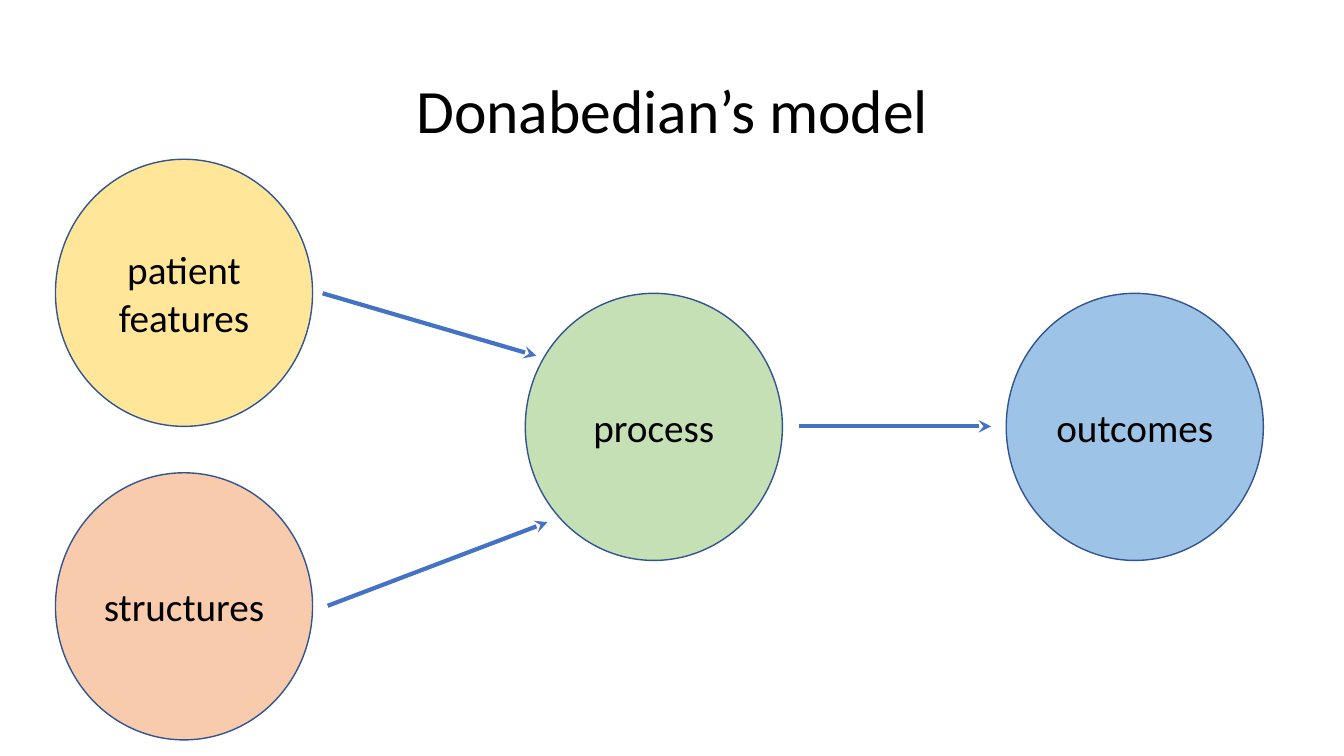
import pptx
import pptx.dml.color
import pptx.enum.shapes
import pptx.enum.text
import pptx.oxml.ns
import pptx.util
from lxml import etree

Inches = pptx.util.Inches
Pt = pptx.util.Pt

FONT = "Calibri"
COLORS = {
    "text": "000000",
    "outline": "325491",
    "arrow": "4472C4",
    "patient": "FFE699",
    "structures": "F8CBAD",
    "process": "C5E0B4",
    "outcomes": "9DC3E6",
}
CIRCLE_W, CIRCLE_H = 2.55, 2.65
# Left, top, fill and text lines, relative to the diagram box
CIRCLES = [
    (0, 0, "patient", ["patient", "features"]),
    (0, 3.11, "structures", ["structures"]),
    (4.66, 1.33, "process", ["process"]),
    (9.43, 1.33, "outcomes", ["outcomes"]),
]
# Start and end points, relative to the diagram box
ARROWS = [
    ((2.65, 1.33), (4.77, 1.95)),
    ((2.7, 4.43), (4.88, 3.6)),
    ((7.37, 2.65), (9.28, 2.65)),
]


def rgb(name):
    return pptx.dml.color.RGBColor.from_string(COLORS[name])


def format_paragraph(p, size):
    p.alignment = pptx.enum.text.PP_ALIGN.CENTER
    p.font.name = FONT
    p.font.size = Pt(size)
    p.font.color.rgb = rgb("text")


def add_title(slide, left, top, width, height, text):
    title = slide.shapes.title
    title.left, title.top = Inches(left), Inches(top)
    title.width, title.height = Inches(width), Inches(height)
    tf = title.text_frame
    tf.text = text
    tf.vertical_anchor = pptx.enum.text.MSO_ANCHOR.MIDDLE
    p = tf.paragraphs[0]
    format_paragraph(p, 44)
    p.line_spacing = 0.9


def add_circle(slide, left, top, color, lines):
    sp = slide.shapes.add_shape(
        pptx.enum.shapes.MSO_SHAPE.OVAL,
        Inches(left), Inches(top), Inches(CIRCLE_W), Inches(CIRCLE_H))
    sp.shadow.inherit = False
    sp.fill.solid()
    sp.fill.fore_color.rgb = rgb(color)
    sp.line.color.rgb = rgb("outline")
    sp.line.width = Pt(1)
    tf = sp.text_frame
    tf.word_wrap = True
    tf.vertical_anchor = pptx.enum.text.MSO_ANCHOR.MIDDLE
    tf.text = "\n".join(lines)
    for p in tf.paragraphs:
        format_paragraph(p, 28)


def add_arrow(slide, x1, y1, x2, y2):
    arrow = slide.shapes.add_connector(
        pptx.enum.shapes.MSO_CONNECTOR.STRAIGHT,
        Inches(x1), Inches(y1), Inches(x2), Inches(y2))
    arrow.line.color.rgb = rgb("arrow")
    arrow.line.width = Pt(3)
    qn = pptx.oxml.ns.qn
    sp_pr = arrow.element.find(qn("p:spPr"))
    etree.SubElement(sp_pr.find(qn("a:ln")), qn("a:tailEnd"), type="stealth")
    etree.SubElement(sp_pr, qn("a:effectLst"))


def add_diagram(slide, left, top):
    for x, y, color, lines in CIRCLES:
        add_circle(slide, left + x, top + y, color, lines)
    for (x1, y1), (x2, y2) in ARROWS:
        add_arrow(slide, left + x1, top + y1, left + x2, top + y2)


def main():
    prs = pptx.Presentation()
    prs.slide_width, prs.slide_height = Inches(13.33), Inches(7.5)
    slide = prs.slides.add_slide(prs.slide_layouts.get_by_name("Title Only"))
    add_title(slide, 0.92, 0.4, 11.5, 1.45, "Donabedian’s model")
    add_diagram(slide, 0.55, 1.58)
    prs.save("out.pptx")


if __name__ == "__main__":
    main()
